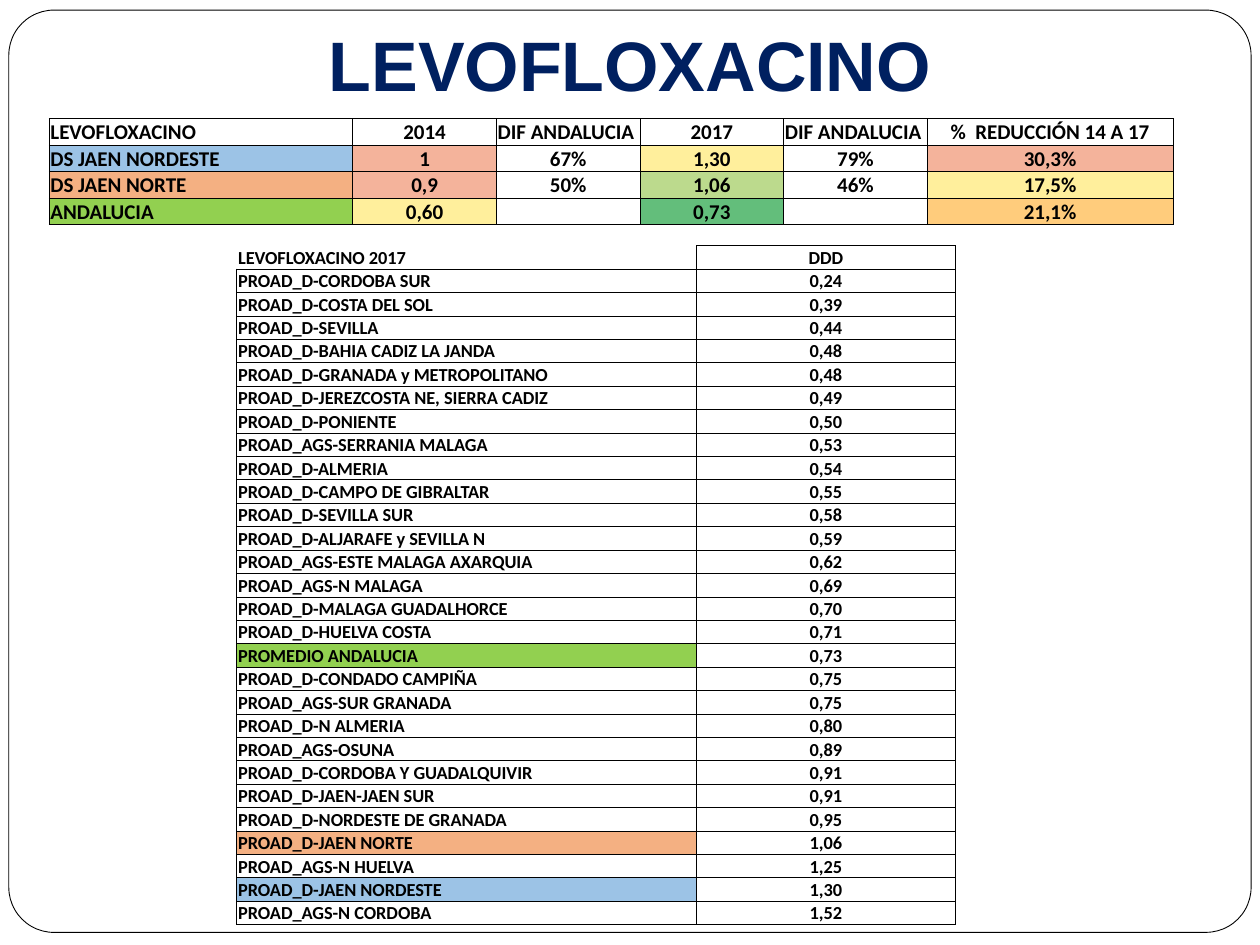
import pptx
import pptx.dml.color
import pptx.enum.shapes
import pptx.enum.text
import pptx.oxml
import pptx.oxml.ns
import pptx.util

Inches = pptx.util.Inches
Pt = pptx.util.Pt
ALIGN = pptx.enum.text.PP_ALIGN
BOTTOM = pptx.enum.text.MSO_ANCHOR.BOTTOM

# Content
TITLE = "LEVOFLOXACINO"
BLUE, ORANGE, GREEN = "9CC3E6", "F4B082", "92D050"
SALMON, YELLOW, LIME, TEAL, AMBER = "F4B39B", "FFEF9C", "BCDA8D", "63BE7B", "FFCC7C"

SUMMARY = [
    ("LEVOFLOXACINO", "2014", "DIF ANDALUCIA", "2017", "DIF ANDALUCIA", "%  REDUCCIÓN 14 A 17"),
    ("DS JAEN NORDESTE", "1", "67%", "1,30", "79%", "30,3%"),
    ("DS JAEN NORTE", "0,9", "50%", "1,06", "46%", "17,5%"),
    ("ANDALUCIA", "0,60", "", "0,73", "", "21,1%"),
]
SUMMARY_FILLS = {
    (1, 0): BLUE, (1, 1): SALMON, (1, 3): YELLOW, (1, 5): SALMON,
    (2, 0): ORANGE, (2, 1): SALMON, (2, 3): LIME, (2, 5): YELLOW,
    (3, 0): GREEN, (3, 1): YELLOW, (3, 3): TEAL, (3, 5): AMBER,
}
DISTRICTS = [
    ("LEVOFLOXACINO 2017", "DDD"),
    ("PROAD_D-CORDOBA SUR", "0,24"),
    ("PROAD_D-COSTA DEL SOL", "0,39"),
    ("PROAD_D-SEVILLA", "0,44"),
    ("PROAD_D-BAHIA CADIZ LA JANDA", "0,48"),
    ("PROAD_D-GRANADA y METROPOLITANO", "0,48"),
    ("PROAD_D-JEREZCOSTA NE, SIERRA CADIZ", "0,49"),
    ("PROAD_D-PONIENTE", "0,50"),
    ("PROAD_AGS-SERRANIA MALAGA", "0,53"),
    ("PROAD_D-ALMERIA", "0,54"),
    ("PROAD_D-CAMPO DE GIBRALTAR", "0,55"),
    ("PROAD_D-SEVILLA SUR", "0,58"),
    ("PROAD_D-ALJARAFE y SEVILLA N", "0,59"),
    ("PROAD_AGS-ESTE MALAGA AXARQUIA", "0,62"),
    ("PROAD_AGS-N MALAGA", "0,69"),
    ("PROAD_D-MALAGA GUADALHORCE", "0,70"),
    ("PROAD_D-HUELVA COSTA", "0,71"),
    ("PROMEDIO ANDALUCIA", "0,73"),
    ("PROAD_D-CONDADO CAMPIÑA", "0,75"),
    ("PROAD_AGS-SUR GRANADA", "0,75"),
    ("PROAD_D-N ALMERIA", "0,80"),
    ("PROAD_AGS-OSUNA", "0,89"),
    ("PROAD_D-CORDOBA Y GUADALQUIVIR", "0,91"),
    ("PROAD_D-JAEN-JAEN SUR", "0,91"),
    ("PROAD_D-NORDESTE DE GRANADA", "0,95"),
    ("PROAD_D-JAEN NORTE", "1,06"),
    ("PROAD_AGS-N HUELVA", "1,25"),
    ("PROAD_D-JAEN NORDESTE", "1,30"),
    ("PROAD_AGS-N CORDOBA", "1,52"),
]
MARKED = {"PROMEDIO ANDALUCIA": GREEN, "PROAD_D-JAEN NORTE": ORANGE, "PROAD_D-JAEN NORDESTE": BLUE}
DISTRICT_FILLS = {(row, 0): MARKED[name] for row, (name, _) in enumerate(DISTRICTS) if name in MARKED}


def color(value):
    return pptx.dml.color.RGBColor.from_string(value)


def add_span(para, text, font, size, ink):
    span = para.add_run()
    span.text = text
    span.font.name, span.font.size, span.font.bold = font, Pt(size), True
    span.font.color.rgb = color(ink)


def add_borders(cell, sides):
    properties = cell._tc.get_or_add_tcPr()
    for side in sides:
        properties.append(pptx.oxml.parse_xml(
            f'<a:ln{side} {pptx.oxml.ns.nsdecls("a")} w="6350"><a:solidFill>'
            f'<a:srgbClr val="000000"/></a:solidFill></a:ln{side}>'))


def add_grid(page, rows, left, top, widths, height, size, fills, left_aligned, open_corner=False):
    grid = page.shapes.add_table(len(rows), len(widths), Inches(left), Inches(top),
                                 Inches(sum(widths)), Inches(height)).table
    grid.first_row = grid.horz_banding = False
    for column, width in zip(grid.columns, widths):
        column.width = Inches(width)
    for row, texts in enumerate(rows):
        grid.rows[row].height = Inches(height / len(rows))
        for col, text in enumerate(texts):
            cell = grid.cell(row, col)
            cell.margin_left = cell.margin_right = cell.margin_top = Inches(0.01)
            cell.margin_bottom = 0
            cell.vertical_anchor = BOTTOM
            # The open corner has no outer borders
            add_borders(cell, "RB" if open_corner and row == col == 0 else "LRTB")
            if (row, col) in fills:
                cell.fill.solid()
                cell.fill.fore_color.rgb = color(fills[row, col])
            else:
                cell.fill.background()
            para = cell.text_frame.paragraphs[0]
            is_left = col == 0 or (row, col) in left_aligned
            para.alignment = ALIGN.LEFT if is_left else ALIGN.CENTER
            if text:
                add_span(para, text, "Calibri", size, "000000")
            else:
                # Keeps an empty cell as low as its row
                para._p.append(pptx.oxml.parse_xml(
                    f'<a:endParaRPr {pptx.oxml.ns.nsdecls("a")} sz="{int(size * 100)}"/>'))


deck = pptx.Presentation()
deck.slide_width, deck.slide_height = Inches(10), Inches(7.5)
page = deck.slides.add_slide(deck.slide_layouts[6])

# Rounded frame
frame = page.shapes.add_shape(pptx.enum.shapes.MSO_SHAPE.ROUNDED_RECTANGLE,
                              Inches(0.07), Inches(0.08), Inches(9.86), Inches(7.32))
frame.adjustments[0] = 0.049
frame.shadow.inherit = False
frame.fill.solid()
frame.fill.fore_color.rgb = color("FFFFFF")
frame.line.color.rgb = color("000000")
frame.line.width = Pt(0.5)

# Title
box = page.shapes.add_textbox(0, 0, deck.slide_width, Inches(0.94))
box.text_frame.word_wrap = True
box.text_frame.vertical_anchor = BOTTOM
box.text_frame.margin_bottom = Inches(0.1)
heading = box.text_frame.paragraphs[0]
heading.alignment = ALIGN.CENTER
add_span(heading, TITLE, "Arial", 40, "002060")

# Summary and district tables
add_grid(page, SUMMARY, 0.39, 0.94, [2.41] + [1.14] * 4 + [1.95], 0.84, 12,
         SUMMARY_FILLS, {(0, 2), (0, 4)})
add_grid(page, DISTRICTS, 1.88, 1.95, [3.65, 2.05], 5.39, 10.5,
         DISTRICT_FILLS, set(), open_corner=True)

deck.save("out.pptx")
